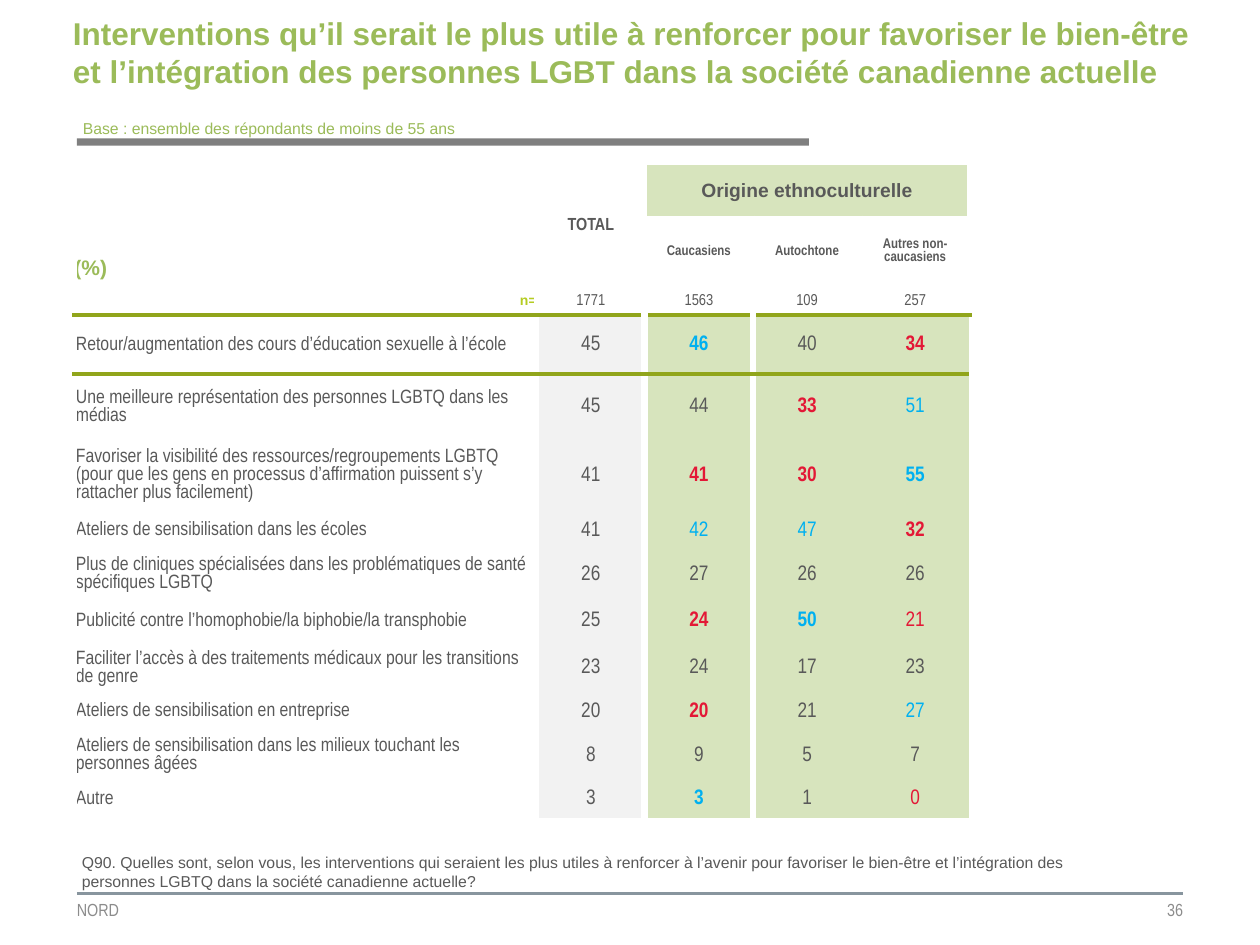
from lxml import etree
from pptx import Presentation
from pptx.dml.color import RGBColor
from pptx.enum import shapes, text
from pptx.oxml import ns
from pptx.util import Cm, Pt

COLORS = {
    "green": "9BBB59", "lime": "B5CC22", "rule": "91A51B", "pale": "D7E4BD",
    "light": "F2F2F2", "bar": "7F7F7F", "footer_line": "88959E",
    "footer": "8C8C8C", "ink": "595959", "blue": "00B0F0", "red": "E31836",
    "white": "FFFFFF",
}
NARROW = "Arial Narrow"
LEFT, CENTER, RIGHT = text.PP_ALIGN.LEFT, text.PP_ALIGN.CENTER, text.PP_ALIGN.RIGHT
MIDDLE, BOTTOM = text.MSO_ANCHOR.MIDDLE, text.MSO_ANCHOR.BOTTOM
CELL_INSETS = (0.03, 0.03, 0.03, 0)
HEAD_INSETS = (0, 0.13, 0, 0.13)
PLAIN_TABLE = "{2D5ABB26-0587-4C30-8999-92F81FD0307C}"

COLUMN_WIDTHS = [9.32] + [2.18] * 4
ROW_HEIGHTS = [0.97, 1.42, 0.58, 1.19, 1.32, 1.32, 0.8, 0.92, 0.92, 0.92, 0.8, 0.92, 0.8]
GROUPS = ["Caucasiens", "Autochtone", "Autres non-caucasiens"]
SAMPLE_SIZES = ["1771", "1563", "109", "257"]
MARKS = {"B": ("blue", True), "b": ("blue", False), "R": ("red", True), "r": ("red", False)}
INTERVENTIONS = [
    ("Retour/augmentation des cours d’éducation sexuelle à l’école", "45 46B 40 34R"),
    ("Une meilleure représentation des personnes LGBTQ dans les médias", "45 44 33R 51b"),
    ("Favoriser la visibilité des ressources/regroupements LGBTQ (pour que les gens en "
     "processus d’affirmation puissent s’y rattacher plus facilement)", "41 41R 30R 55B"),
    ("Ateliers de sensibilisation dans les écoles", "41 42b 47b 32R"),
    ("Plus de cliniques spécialisées dans les problématiques de santé spécifiques LGBTQ",
     "26 27 26 26"),
    ("Publicité contre l’homophobie/la biphobie/la transphobie", "25 24R 50B 21r"),
    ("Faciliter l’accès à des traitements médicaux pour les transitions de genre",
     "23 24 17 23"),
    ("Ateliers de sensibilisation en entreprise", "20 20R 21 27b"),
    ("Ateliers de sensibilisation dans les milieux touchant les personnes âgées", "8 9 5 7"),
    ("Autre", "3 3B 1 0r"),
]


def rgb(color):
    return RGBColor.from_string(COLORS[color])


def write(frame, words, size, color="ink", font="Arial", bold=False, align=LEFT):
    paragraph = frame.paragraphs[0]
    paragraph.text = words
    paragraph.alignment = align
    paragraph.font.name = font
    paragraph.font.size = Pt(size)
    paragraph.font.bold = bold
    paragraph.font.color.rgb = rgb(color)
    return paragraph


def set_insets(target, left, top, right, bottom):
    target.margin_left, target.margin_top = Cm(left), Cm(top)
    target.margin_right, target.margin_bottom = Cm(right), Cm(bottom)


def add_label(slide, box, words, size, color, wrap=True, insets=None, **style):
    frame = slide.shapes.add_textbox(*map(Cm, box)).text_frame
    frame.word_wrap = wrap
    if insets:
        set_insets(frame, *insets)
        frame.vertical_anchor = MIDDLE
    write(frame, words, size, color, **style)


def add_title(slide, words):
    title = slide.shapes.title
    title.left, title.top, title.width, title.height = map(Cm, (1.47, 0.53, 22.76, 1.75))
    frame = title.text_frame
    frame.auto_size = text.MSO_AUTO_SIZE.NONE
    frame.word_wrap = True
    frame.vertical_anchor = MIDDLE
    set_insets(frame, 0, 0, 0, 0.73)
    write(frame, words, 18, "green", bold=True)


def add_rule(slide, left, right, top):
    rule = slide.shapes.add_connector(
        shapes.MSO_CONNECTOR.STRAIGHT, Cm(left), Cm(top), Cm(right), Cm(top))
    rule.line.color.rgb = rgb("footer_line")
    rule.line.width = Pt(1.5)
    etree.SubElement(rule._element.spPr, ns.qn("a:effectLst"))


def add_bar(slide, box):
    bar = slide.shapes.add_shape(shapes.MSO_SHAPE.RECTANGLE, *map(Cm, box))
    bar.shadow.inherit = False
    bar.fill.solid()
    bar.fill.fore_color.rgb = rgb("bar")
    bar.line.fill.background()


def set_borders(cell, borders):
    properties = cell._tc.get_or_add_tcPr()
    for side in "LRTB":
        if side in borders:
            color, width = borders[side]
            line = etree.SubElement(properties, ns.qn("a:ln" + side), w=str(Pt(width)))
            fill = etree.SubElement(line, ns.qn("a:solidFill"))
            etree.SubElement(fill, ns.qn("a:srgbClr"), val=COLORS[color])


def fill_cell(cell, words, size, insets=CELL_INSETS, anchor=MIDDLE, fill=None, **style):
    if fill:
        cell.fill.solid()
        cell.fill.fore_color.rgb = rgb(fill)
    else:
        cell.fill.background()
    set_insets(cell, *insets)
    cell.vertical_anchor = anchor
    return write(cell.text_frame, words, size, **style)


def borders_for(row, column):
    thin, gap, rule = ("white", 3), ("white", 4.5), ("rule", 3)
    borders = {}
    if row < 3 or column < 2:
        borders.update(L=thin, R=thin)
    if row >= 3 and column == 1:
        borders["R"] = gap
    if row >= 3 and column == 2:
        borders["L"] = gap
    if row == 2:
        borders["B"] = rule
    if row == 3:
        borders["T"] = rule
    return borders


def add_results(slide):
    table = slide.shapes.add_table(
        len(ROW_HEIGHTS), len(COLUMN_WIDTHS), Cm(1.5), Cm(3.33),
        Cm(sum(COLUMN_WIDTHS)), Cm(sum(ROW_HEIGHTS))).table
    table.first_row = table.horz_banding = False
    table._tbl.tblPr.find(ns.qn("a:tableStyleId")).text = PLAIN_TABLE
    for column, width in zip(table.columns, COLUMN_WIDTHS):
        column.width = Cm(width)
    for row, height in enumerate(ROW_HEIGHTS):
        table.rows[row].height = Cm(height)
        for column in range(len(COLUMN_WIDTHS)):
            set_borders(table.cell(row, column), borders_for(row, column))

    table.cell(0, 1).merge(table.cell(1, 1))
    table.cell(0, 2).merge(table.cell(0, 4))
    fill_cell(table.cell(0, 1), "TOTAL", 10, font=NARROW, bold=True, align=CENTER)
    fill_cell(table.cell(0, 2), "Origine ethnoculturelle", 11, fill="pale",
              bold=True, align=CENTER)
    unit = fill_cell(table.cell(1, 0), "(%)", 12, HEAD_INSETS, BOTTOM,
                     color="green", bold=True)
    base = fill_cell(table.cell(2, 0), "n=", 8, HEAD_INSETS,
                     color="lime", bold=True, align=RIGHT)
    unit.line_spacing = base.line_spacing = 0.95
    for column, group in enumerate(GROUPS, 2):
        fill_cell(table.cell(1, column), group, 8, font=NARROW, bold=True, align=CENTER)
    for column, count in enumerate(SAMPLE_SIZES, 1):
        fill_cell(table.cell(2, column), count, 9, font=NARROW, align=CENTER)

    for row, (intervention, shares) in enumerate(INTERVENTIONS, 3):
        fill_cell(table.cell(row, 0), intervention, 11, font=NARROW)
        for column, share in enumerate(shares.split(), 1):
            color, bold = MARKS.get(share[-1], ("ink", False))
            fill_cell(table.cell(row, column), share.rstrip("BbRr"), 12,
                      fill="light" if column == 1 else "pale",
                      color=color, font=NARROW, bold=bold, align=CENTER)


def main():
    deck = Presentation()
    deck.slide_width, deck.slide_height = Cm(25.4), Cm(19.05)
    slide = deck.slides.add_slide(deck.slide_layouts[5])
    add_rule(slide, 1.55, 23.85, 18.01)
    add_bar(slide, (1.55, 2.79, 14.76, 0.15))
    footer = dict(size=10, color="footer", font=NARROW, insets=(0, 0, 0, 0))
    add_label(slide, (1.55, 18.01, 7.11, 0.66), "NORD", **footer)
    add_label(slide, (16.64, 18.01, 7.21, 0.66), "36", align=RIGHT, **footer)
    add_results(slide)
    add_label(slide, (1.42, 2.26, 8.08, 0.64),
              "Base : ensemble des répondants de moins de 55 ans", 9, "green", wrap=False)
    add_label(slide, (1.4, 17.07, 21.72, 1.02),
              "Q90. Quelles sont, selon vous, les interventions qui seraient les plus utiles "
              "à renforcer à l’avenir pour favoriser le bien-être et l’intégration des "
              "personnes LGBTQ dans la société canadienne actuelle?", 9, "ink")
    add_title(slide, "Interventions qu’il serait le plus utile à renforcer pour favoriser le "
                     "bien-être et l’intégration des personnes LGBT dans la société "
                     "canadienne actuelle")
    deck.save("out.pptx")


if __name__ == "__main__":
    main()
